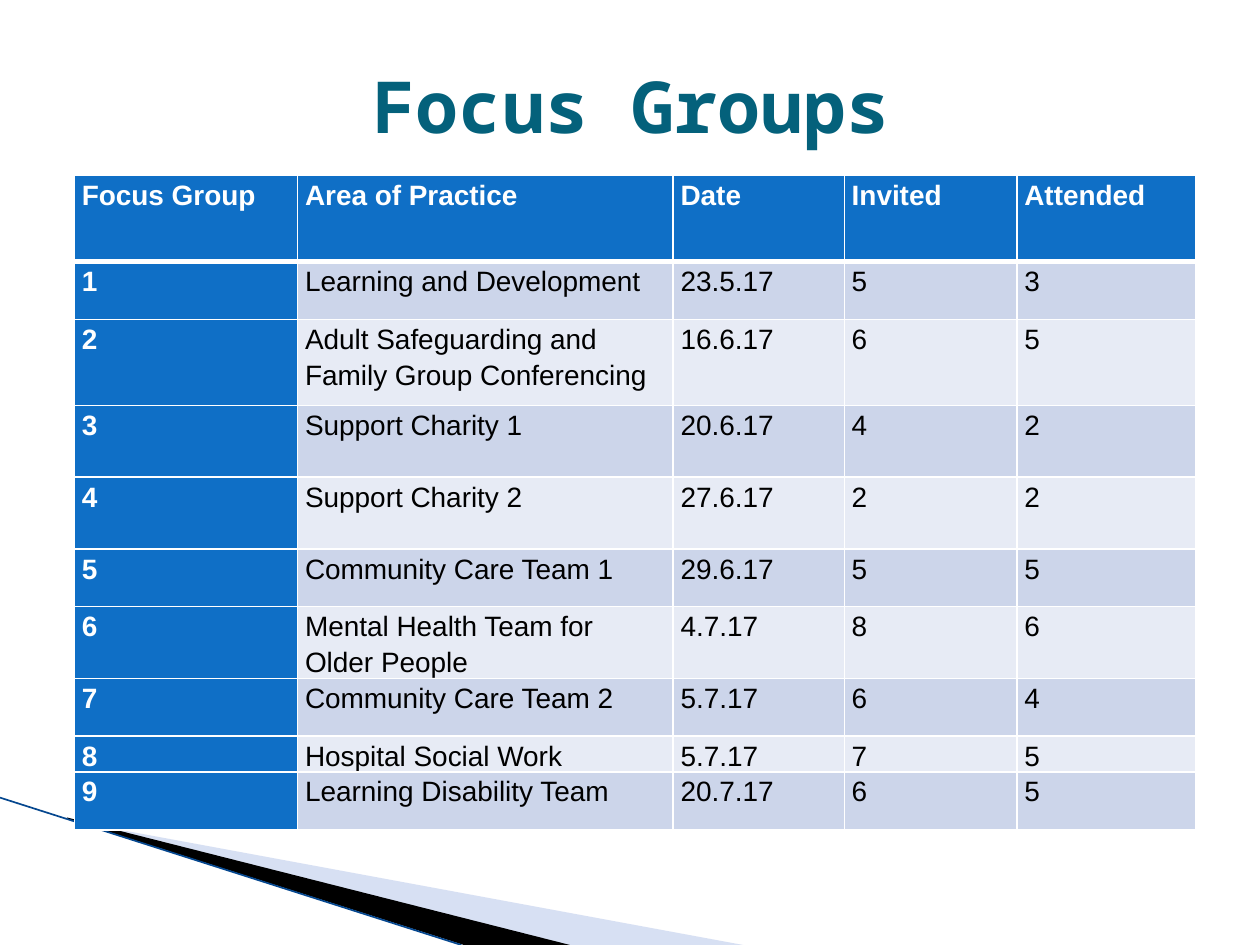
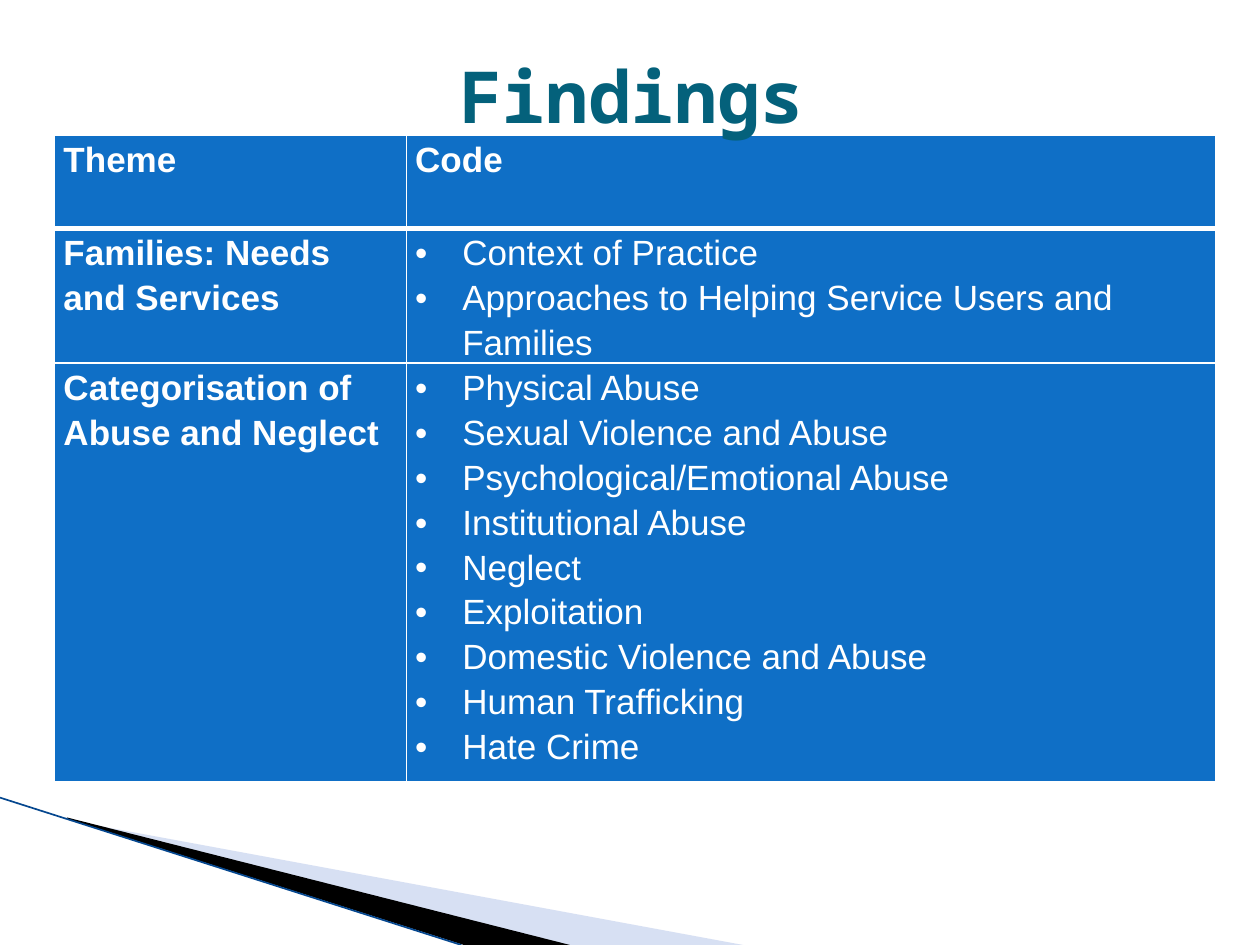
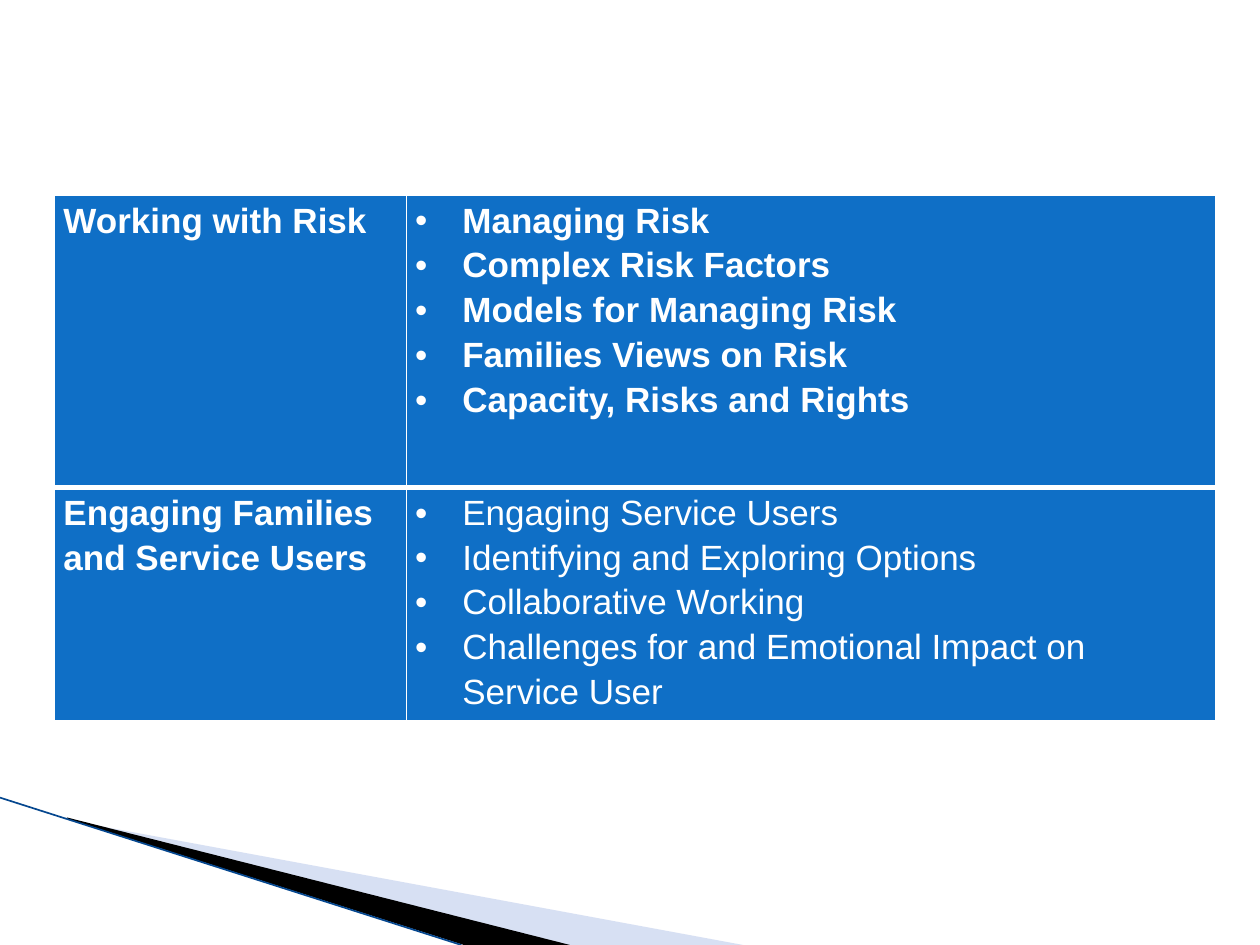
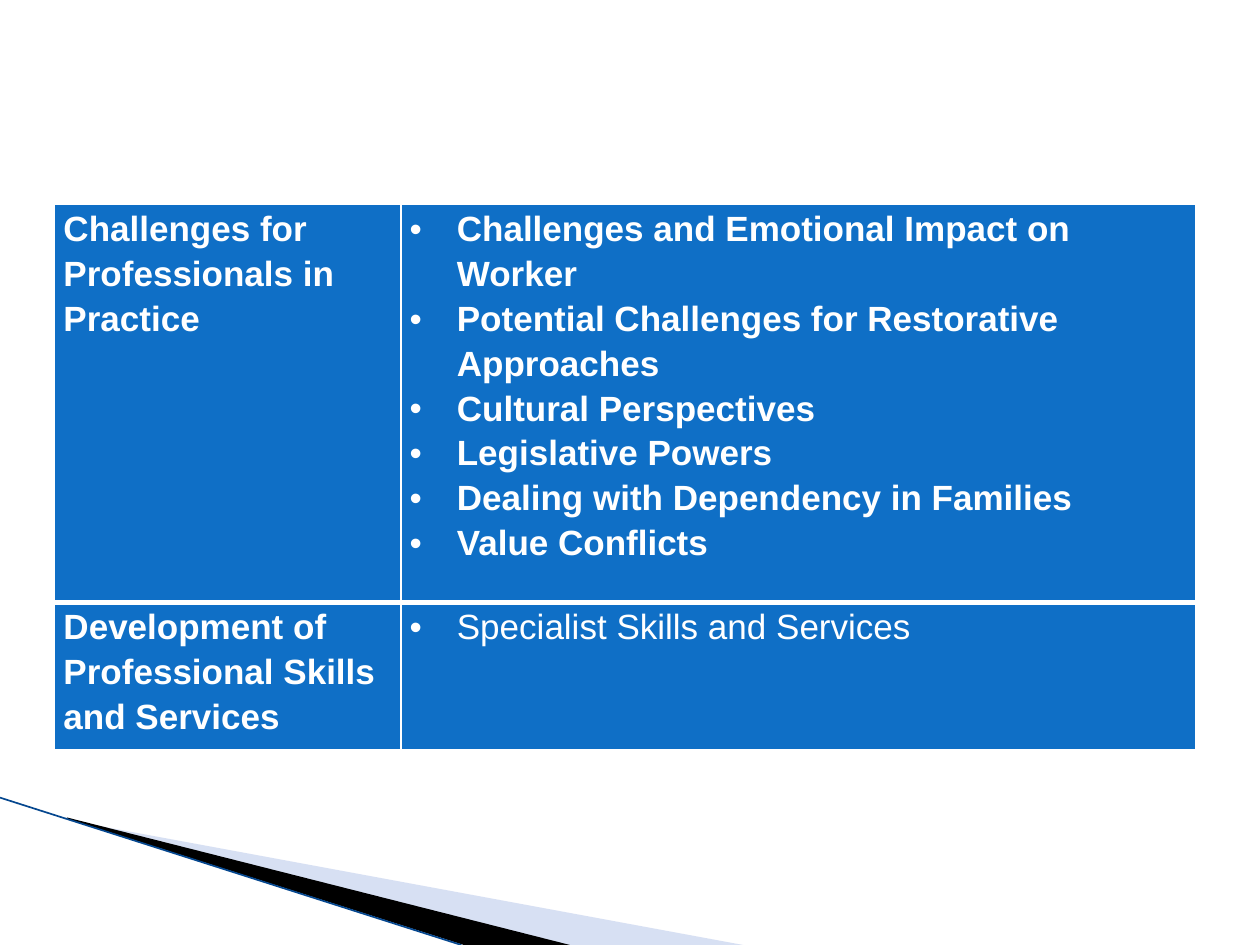
import pptx
import pptx.dml.color
import pptx.enum.shapes
import pptx.enum.text
import pptx.oxml
import pptx.oxml.ns
import pptx.util
from lxml import etree

Cm = pptx.util.Cm
Pt = pptx.util.Pt
RGBColor = pptx.dml.color.RGBColor
qn = pptx.oxml.ns.qn

# Colours
WHITE = RGBColor(0xFF, 0xFF, 0xFF)
BLACK = RGBColor(0x00, 0x00, 0x00)
TITLE_TEAL = RGBColor(0x04, 0x61, 0x7B)
CELL_BLUE = RGBColor(0x0F, 0x6F, 0xC6)
BAND_DARK = RGBColor(0xCC, 0xD5, 0xEA)
BAND_LIGHT = RGBColor(0xE7, 0xEB, 0xF5)
WEDGE_BLUE = RGBColor(0x9D, 0xB2, 0xE1)
EDGE_BLUE = RGBColor(0x05, 0x47, 0x8F)

# Bottom-corner decoration, points in centimetres
PALE_WEDGE = [(1.4, 16.54), (14.98, 19.05), (11.45, 19.05), (1.4, 16.51)]
BLACK_WEDGE = [(1.35, 16.48), (11.49, 19.05), (9.35, 19.05), (1.37, 16.51)]


def write_text(paragraph, text, font="Arial", size=20, color=WHITE, bold=False,
               spacing=None, align=None, bullet=False):
    """Put formatted text into a paragraph."""
    if bullet:
        properties = paragraph._p.get_or_add_pPr()
        properties.set("marL", str(Cm(0.95)))
        properties.set("indent", str(-Cm(0.95)))
        etree.SubElement(properties, qn("a:buFont"), typeface="Arial")
        etree.SubElement(properties, qn("a:buChar"), char="•")
    if spacing:
        paragraph.line_spacing = spacing
    if align is not None:
        paragraph.alignment = align
    run = paragraph.add_run()
    run.text = text
    run.font.name = font
    run.font.size = Pt(size)
    run.font.bold = bold
    run.font.color.rgb = color


def set_borders(cell, top=1, bottom=1):
    """Draw white borders round a cell; widths in points."""
    properties = cell._tc.get_or_add_tcPr()
    widths = {"lnL": 1, "lnR": 1, "lnT": top, "lnB": bottom}
    for position, (tag, width) in enumerate(widths.items()):
        line = etree.Element(qn("a:" + tag), w=str(Pt(width)))
        fill = etree.SubElement(line, qn("a:solidFill"))
        etree.SubElement(fill, qn("a:srgbClr"), val=str(WHITE))
        properties.insert(position, line)


class Deck:
    """Holds the shared style and the current slide."""

    def __init__(self):
        self.presentation = pptx.Presentation()
        self.presentation.slide_width = Cm(25.4)
        self.presentation.slide_height = Cm(19.05)
        self.slide = None

    def new_slide(self):
        layout = self.presentation.slide_layouts[6]
        self.slide = self.presentation.slides.add_slide(layout)
        self.wedge(PALE_WEDGE, WEDGE_BLUE, opacity=40)
        self.wedge(BLACK_WEDGE, BLACK)
        self.edge_line()

    def wedge(self, points, color, opacity=100):
        corners = [(Cm(x), Cm(y)) for x, y in points]
        builder = self.slide.shapes.build_freeform(*corners[0])
        builder.add_line_segments(corners[1:], close=True)
        shape = builder.convert_to_shape()
        shape.shadow.inherit = False
        shape.fill.solid()
        shape.fill.fore_color.rgb = color
        shape.line.fill.background()
        if opacity < 100:
            color_element = shape._element.spPr.find(".//" + qn("a:srgbClr"))
            etree.SubElement(color_element, qn("a:alpha"), val=str(opacity * 1000))

    def edge_line(self):
        connector = self.slide.shapes.add_connector(
            pptx.enum.shapes.MSO_CONNECTOR.STRAIGHT,
            Cm(0), Cm(16.08), Cm(9.3), Cm(19.05))
        connector.line.color.rgb = EDGE_BLUE
        connector.line.width = Pt(0.95)
        etree.SubElement(connector._element.spPr, qn("a:effectLst"))

    def title(self, text, top, height):
        box = self.slide.shapes.add_textbox(Cm(1.3), Cm(top), Cm(22.86), Cm(height))
        frame = box.text_frame
        frame.word_wrap = True
        frame.vertical_anchor = pptx.enum.text.MSO_ANCHOR.MIDDLE
        write_text(frame.paragraphs[0], text, font="Noto Sans Mono", size=41,
                   color=TITLE_TEAL, bold=True,
                   align=pptx.enum.text.PP_ALIGN.CENTER)

    def table(self, rows, left, top, widths, heights, size=20, inset=0.18,
              banded=False):
        """Add a table; a cell given as a list becomes bullets."""
        frame = self.slide.shapes.add_table(
            len(rows), len(widths), Cm(left), Cm(top),
            Cm(sum(widths)), Cm(sum(heights)))
        table = frame.table
        table.horz_banding = False
        for column, width in zip(table.columns, widths):
            column.width = Cm(width)
        for row, height in zip(table.rows, heights):
            row.height = Cm(height)
        for row_index, row in enumerate(rows):
            for column_index, content in enumerate(row):
                cell = table.cell(row_index, column_index)
                heading = row_index == 0 or column_index == 0
                fill, color = CELL_BLUE, WHITE
                if banded and not heading:
                    fill = BAND_DARK if row_index % 2 else BAND_LIGHT
                    color = BLACK
                cell.fill.solid()
                cell.fill.fore_color.rgb = fill
                set_borders(cell, top=3 if row_index == 1 else 1,
                            bottom=3 if row_index == 0 else 1)
                cell.margin_left = cell.margin_right = Cm(inset)
                cell.margin_top = cell.margin_bottom = 0
                bullet = isinstance(content, list)
                text_frame = cell.text_frame
                for index, text in enumerate(content if bullet else [content]):
                    paragraph = (text_frame.add_paragraph() if index
                                 else text_frame.paragraphs[0])
                    write_text(paragraph, text, size=size, color=color,
                               bold=heading, spacing=1.15, bullet=bullet)


def main():
    deck = Deck()

    # Focus groups
    deck.new_slide()
    groups = [
        ("Learning and Development", "23.5.17", "5", "3"),
        ("Adult Safeguarding and Family Group Conferencing", "16.6.17", "6", "5"),
        ("Support Charity 1", "20.6.17", "4", "2"),
        ("Support Charity 2", "27.6.17", "2", "2"),
        ("Community Care Team 1", "29.6.17", "5", "5"),
        ("Mental Health Team for Older People", "4.7.17", "8", "6"),
        ("Community Care Team 2", "5.7.17", "6", "4"),
        ("Hospital Social Work", "5.7.17", "7", "5"),
        ("Learning Disability Team", "20.7.17", "6", "5"),
    ]
    header = ("Focus Group", "Area of Practice", "Date", "Invited", "Attended")
    numbered = [(str(number), *group) for number, group in enumerate(groups, 1)]
    deck.table([header] + numbered, 1.5, 3.54,
               widths=[4.5, 7.57, 3.45, 3.48, 3.61],
               heights=[1.73, 1.17, 1.73, 1.45, 1.45, 1.16, 1.45, 1.16, 0.72, 1.17],
               size=16, inset=0.15, banded=True)
    deck.title("Focus Groups", 0.53, 3.18)

    # Findings: needs and categories
    theme_widths = [7.09, 16.31]
    deck.new_slide()
    deck.table([
        ("Theme", "Code"),
        ("Families: Needs and Services", [
            "Context of Practice",
            "Approaches to Helping Service Users and Families"]),
        ("Categorisation of Abuse and Neglect", [
            "Physical Abuse", "Sexual Violence and Abuse",
            "Psychological/Emotional Abuse", "Institutional Abuse", "Neglect",
            "Exploitation", "Domestic Violence and Abuse", "Human Trafficking",
            "Hate Crime"]),
    ], 1.1, 2.72, theme_widths, heights=[1.88, 2.71, 8.44])
    deck.title("Findings", 0, 3.84)

    # Findings: risk and engagement
    deck.new_slide()
    deck.table([
        ("Working with Risk", [
            "Managing Risk", "Complex Risk Factors", "Models for Managing Risk",
            "Families Views on Risk", "Capacity, Risks and Rights"]),
        ("Engaging Families and Service Users", [
            "Engaging Service Users", "Identifying and Exploring Options",
            "Collaborative Working",
            "Challenges for and Emotional Impact on Service User"]),
    ], 1.1, 3.94, theme_widths, heights=[5.89, 4.7])

    # Findings: professionals
    deck.new_slide()
    deck.table([
        ("Challenges for Professionals in Practice", [
            "Challenges and Emotional Impact on Worker",
            "Potential Challenges for Restorative Approaches",
            "Cultural Perspectives", "Legislative Powers",
            "Dealing with Dependency in Families", "Value Conflicts"]),
        ("Development of Professional Skills and Services", [
            "Specialist Skills and Services"]),
    ], 1.1, 4.11, widths=[6.98, 16.03], heights=[8.03, 2.97])

    deck.presentation.save("out.pptx")


if __name__ == "__main__":
    main()
